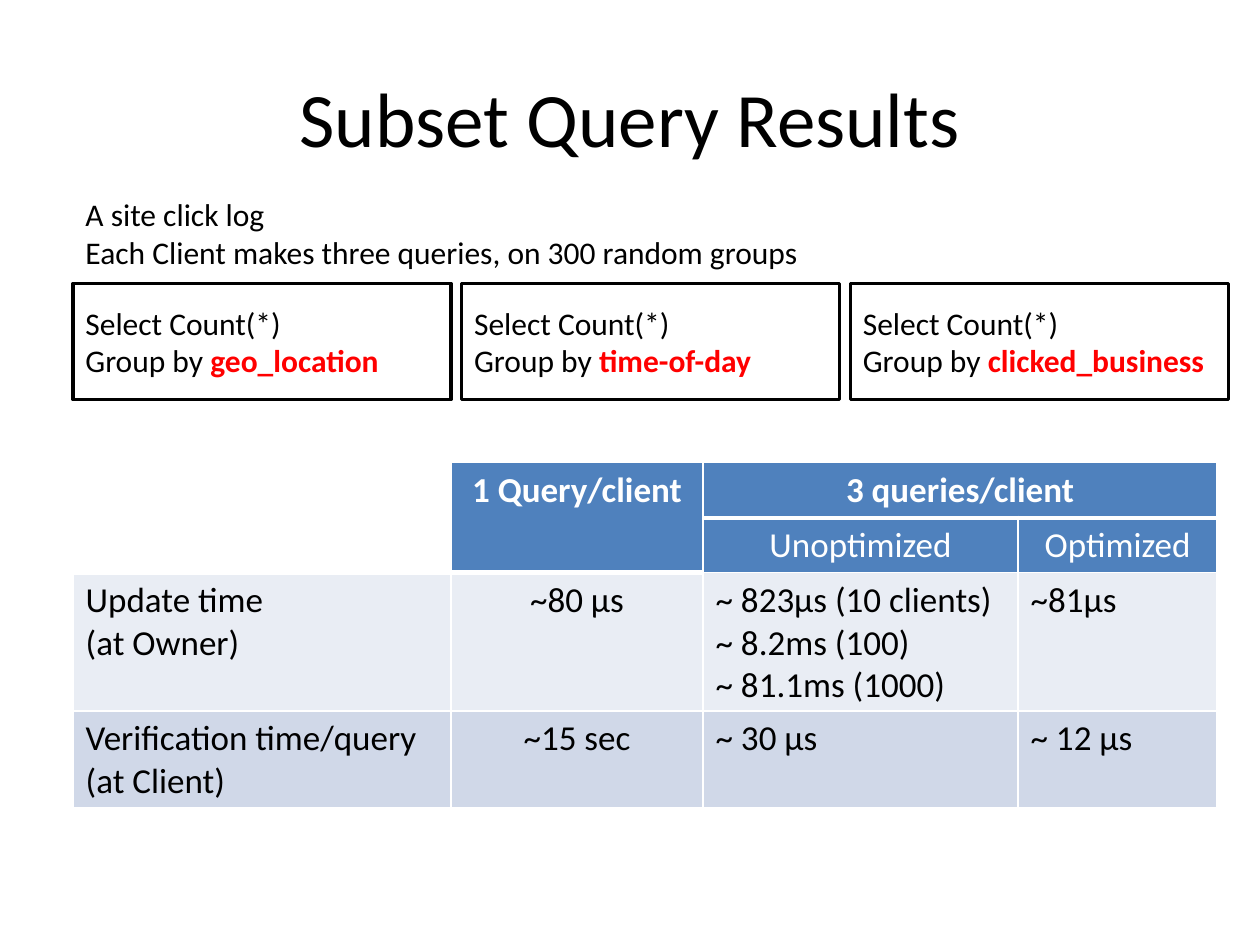
"""Build the slide of subset query results."""
from typing import NamedTuple

from lxml.etree import SubElement
from pptx import Presentation
from pptx.dml.color import RGBColor
from pptx.enum.shapes import MSO_SHAPE as Shape
from pptx.enum.text import MSO_ANCHOR as Anchor, PP_ALIGN as Align
from pptx.oxml import parse_xml
from pptx.oxml.ns import nsdecls, qn
from pptx.util import Inches, Pt

COLORS = {"text": "000000", "accent": "FF0000", "paper": "FFFFFF",
          "header": "4F81BD", "light": "E9EDF4", "dark": "D0D8E8"}
LEFT = 0.58
QUERY_PITCH = 3.085
COLUMN_WIDTHS = (3, 2, 2.5, 1.58)
ROW_HEIGHTS = (0.44, 0.43, 1.1, 0.76)


class Entry(NamedTuple):
    """One table cell."""
    text: str
    fill: str
    color: str = "text"
    bold: bool = False
    align: Align = Align.LEFT


def header(text: str, bold: bool = True) -> Entry:
    """Describe a header cell."""
    return Entry(text, "header", "paper", bold, Align.CENTER)


def body_row(fill: str, label: str, single: str, *triple: str) -> list[Entry]:
    """Describe a row of measurements."""
    return [Entry(label, fill), Entry(single, fill, align=Align.CENTER),
            *(Entry(text, fill) for text in triple)]


BLANK = Entry("", "paper")
ROWS = [
    [BLANK, header("1 Query/client"), header("3 queries/client"), header("")],
    [BLANK, header(""), header("Unoptimized", False), header("Optimized", False)],
    body_row("light", "Update time\v(at Owner)", "~80 μs",
             "~ 823μs (10 clients)\n~ 8.2ms (100)\n~ 81.1ms (1000)", "~81μs"),
    body_row("dark", "Verification time/query \v(at Client)", "~15 sec",
             "~ 30 μs", "~ 12 μs"),
]
MERGES = [((0, 0), (1, 0)), ((0, 1), (1, 1)), ((0, 2), (0, 3))]


def rgb(name: str) -> RGBColor:
    """Look up a named color."""
    return RGBColor.from_string(COLORS[name])


def write(frame, text: str, *, size: float = 18, color: str = "text",
          bold: bool = False, align: Align = Align.LEFT, accent: str = "") -> None:
    """Fill a text frame, ending with an optional accented run."""
    frame.text = text
    accent_run = None
    if accent:
        accent_run = frame.paragraphs[-1].add_run()
        accent_run.text = accent
    for paragraph in frame.paragraphs:
        paragraph.alignment = align
        for run in paragraph.runs:
            run.font.name = "Calibri"
            run.font.size = Pt(size)
            run.font.bold = bold
            run.font.color.rgb = rgb(color)
    if accent_run is not None:
        accent_run.font.bold = True
        accent_run.font.color.rgb = rgb("accent")


def add_query(slide, index: int, group: str) -> None:
    """Draw one boxed query."""
    box = slide.shapes.add_shape(Shape.RECTANGLE, Inches(LEFT + index * QUERY_PITCH),
                                 Inches(2.25), Inches(3), Inches(0.92))
    box.shadow.inherit = False
    box.fill.background()
    box.line.color.rgb = rgb("text")
    box.line.width = Pt(2)
    box.text_frame.vertical_anchor = Anchor.MIDDLE
    write(box.text_frame, "Select Count(*)\nGroup by ", accent=group)


def set_borders(cell, top: float, bottom: float) -> None:
    """Give a cell white borders, one point wide at the sides."""
    properties = cell._tc.get_or_add_tcPr()
    for position, (side, width) in enumerate(
            {"L": 1, "R": 1, "T": top, "B": bottom}.items()):
        line = parse_xml(f'<a:ln{side} {nsdecls("a")} w="{Pt(width)}"/>')
        fill = SubElement(line, qn("a:solidFill"))
        SubElement(fill, qn("a:srgbClr"), val=COLORS["paper"])
        properties.insert(position, line)


def edge_width(row: int, column: int) -> float:
    """Return the width of the border below a cell."""
    return 3 if row == 0 or (row == 1 and column < 2) else 1


def add_results(slide) -> None:
    """Draw the table of timings."""
    table = slide.shapes.add_table(
        len(ROWS), len(COLUMN_WIDTHS), Inches(LEFT), Inches(3.67),
        Inches(sum(COLUMN_WIDTHS)), Inches(sum(ROW_HEIGHTS))).table
    table.first_row = table.horz_banding = False
    for column, width in zip(table.columns, COLUMN_WIDTHS):
        column.width = Inches(width)
    for row, height in zip(table.rows, ROW_HEIGHTS):
        row.height = Inches(height)
    for r, entries in enumerate(ROWS):
        for c, entry in enumerate(entries):
            cell = table.cell(r, c)
            cell.fill.solid()
            cell.fill.fore_color.rgb = rgb(entry.fill)
            set_borders(cell, edge_width(r - 1, c) if r else 1, edge_width(r, c))
            write(cell.text_frame, entry.text, size=20, color=entry.color,
                  bold=entry.bold, align=entry.align)
    for first, last in MERGES:
        table.cell(*first).merge(table.cell(*last))


def main() -> None:
    """Build and save the slide."""
    deck = Presentation()
    deck.slide_width, deck.slide_height = Inches(10), Inches(7.5)
    slide = deck.slides.add_slide(deck.slide_layouts[5])
    title = slide.shapes.title
    title.left, title.top = Inches(0.5), Inches(0.3)
    title.width, title.height = Inches(9), Inches(1.25)
    title.text_frame.vertical_anchor = Anchor.MIDDLE
    write(title.text_frame, "Subset Query Results", size=44, align=Align.CENTER)
    for index, group in enumerate(("geo_location", "time-of-day", "clicked_business")):
        add_query(slide, index, group)
    intro = slide.shapes.add_textbox(Inches(LEFT), Inches(1.5), Inches(5.92), Inches(0.71))
    intro.text_frame.word_wrap = False
    write(intro.text_frame,
          "A site click log\nEach Client makes three queries, on 300 random groups")
    add_results(slide)
    deck.save("out.pptx")


if __name__ == "__main__":
    main()
